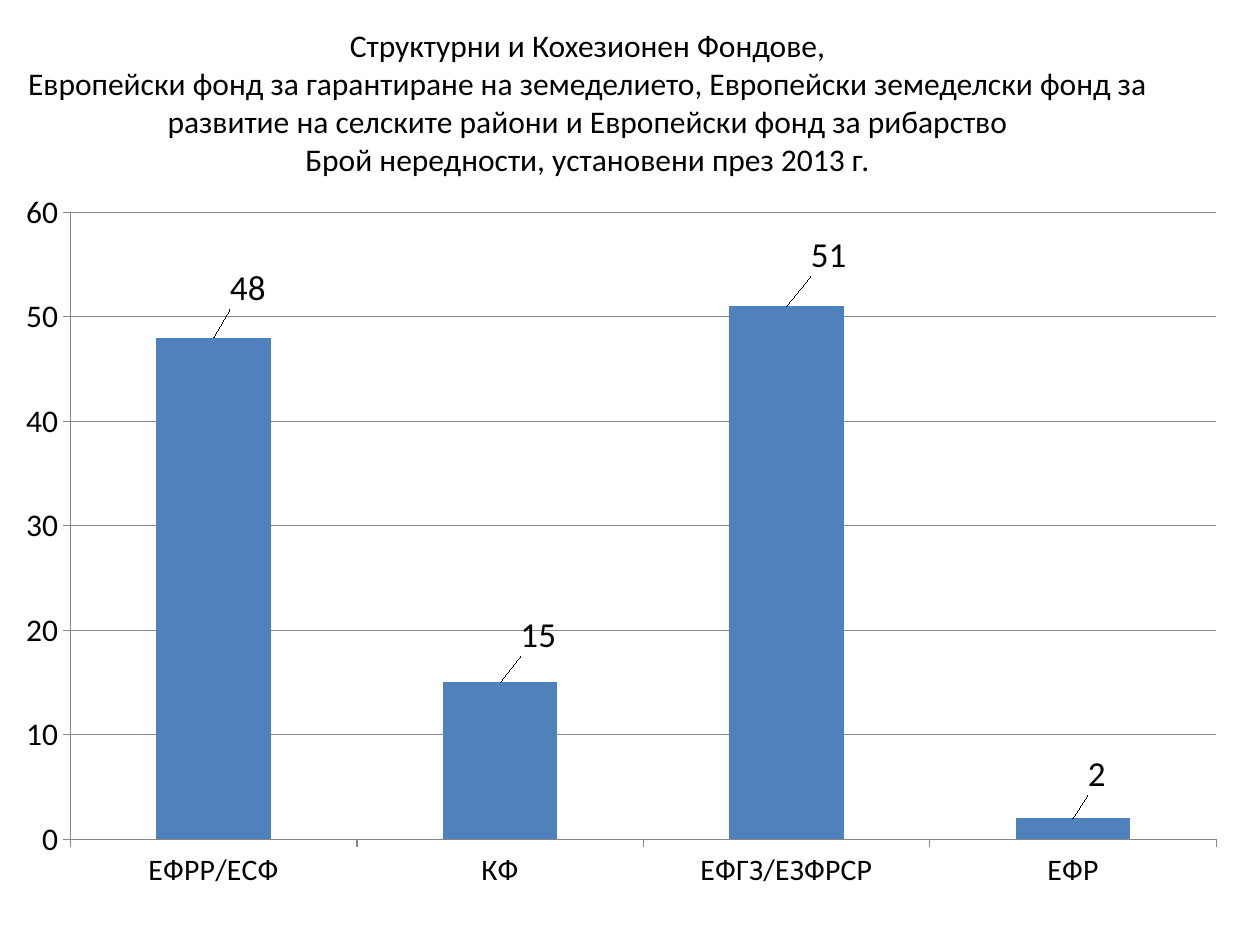
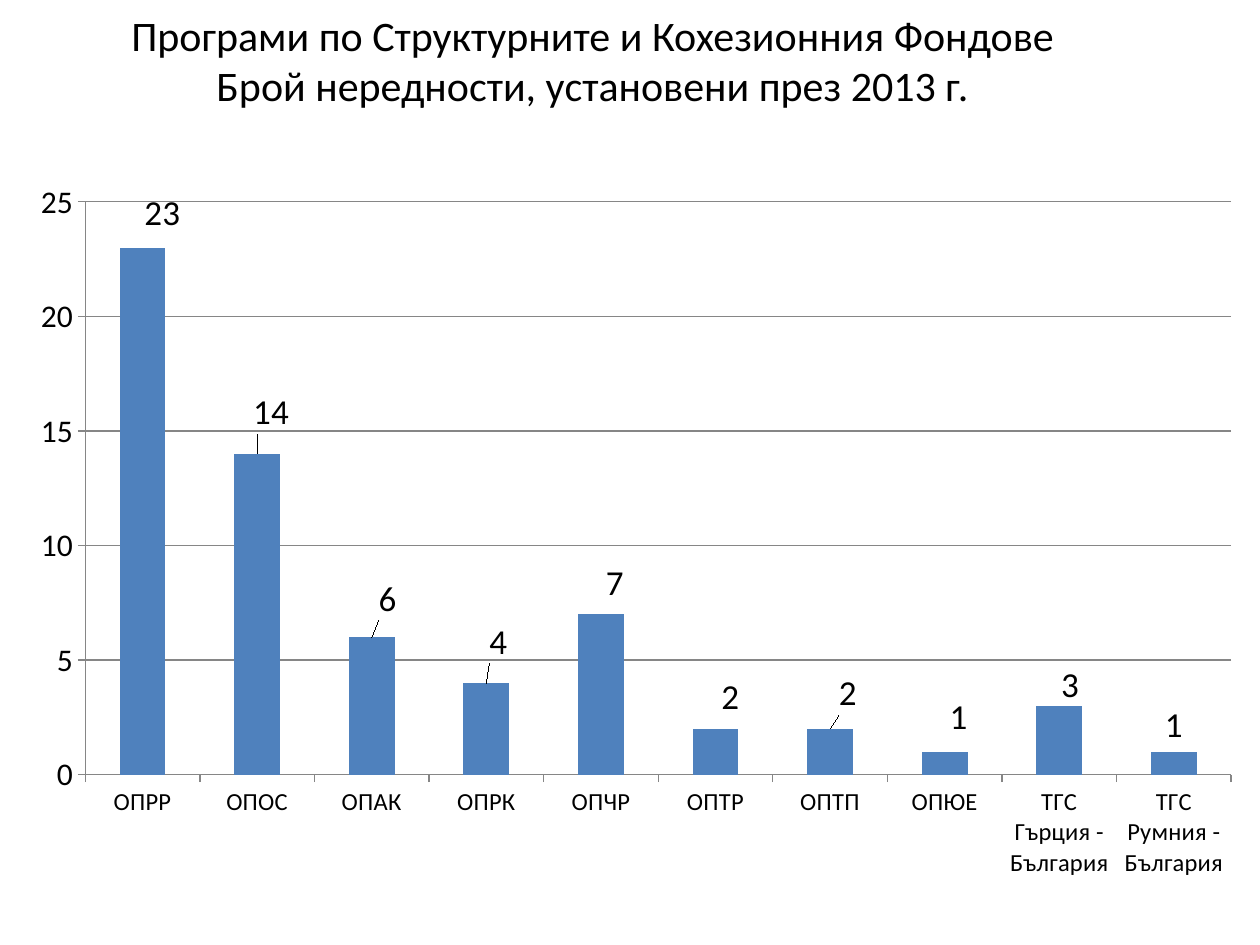
from dataclasses import dataclass

from pptx import Presentation
from pptx import util as u
from pptx.chart.chart import Chart
from pptx.chart.data import CategoryChartData
from pptx.dml.color import RGBColor
from pptx.enum import chart as charts
from pptx.enum import text
from pptx.oxml import parse_xml
from pptx.oxml.ns import nsdecls
from pptx.slide import Slide


@dataclass(frozen=True)
class Theme:
    font: str = "Calibri"
    ink: RGBColor = RGBColor(0x00, 0x00, 0x00)
    bar: RGBColor = RGBColor(0x4F, 0x81, 0xBD)
    rule: RGBColor = RGBColor(0x86, 0x86, 0x86)
    rule_width: float = 0.75
    axis_size: int = 18
    label_size: int = 20


@dataclass(frozen=True)
class Frame:
    """Left, top, width and height in centimetres."""
    left: float
    top: float
    width: float
    height: float

    def lengths(self) -> list[u.Cm]:
        return [u.Cm(side) for side in (self.left, self.top, self.width, self.height)]


@dataclass(frozen=True)
class Bar:
    """A category, its value, and how far (cm) its label is moved right and down."""
    category: str
    value: int
    shift: tuple[float, float] | None = None


@dataclass(frozen=True)
class ChartPage:
    title: tuple[str, ...]
    title_size: int
    title_frame: Frame
    chart_frame: Frame
    plot_frame: Frame
    category_size: int
    top_value: int
    step: int
    bars: tuple[Bar, ...]


THEME = Theme()
CHART_SIZE = (24.97, 14.6)

PAGES = (
    ChartPage(
        title=(
            "Структурни и Кохезионен Фондове,",
            "Европейски фонд за гарантиране на земеделието, Европейски земеделски фонд за "
            "развитие на селските райони и Европейски фонд за рибарство",
            "Брой нередности, установени през 2013 г.",
        ),
        title_size=18,
        title_frame=Frame(0.2, 0.43, 23.29, 3.25),
        chart_frame=Frame(0.03, 3.61, *CHART_SIZE),
        plot_frame=Frame(1.39, 0.67, 23.1, 12.64),
        category_size=17,
        top_value=60,
        step=10,
        bars=(
            Bar("ЕФРР/ЕСФ", 48, (0.69, -0.46)),
            Bar("КФ", 15, (0.77, -0.42)),
            Bar("ЕФГЗ/ЕЗФРСР", 51, (0.85, -0.5)),
            Bar("ЕФР", 2, (0.48, -0.36)),
        ),
    ),
    ChartPage(
        title=(
            "Програми по Структурните и Кохезионния Фондове",
            "Брой нередности, установени през 2013 г.",
        ),
        title_size=24,
        title_frame=Frame(0.2, 0, 23.5, 2.41),
        chart_frame=Frame(0.33, 3.38, *CHART_SIZE),
        plot_frame=Frame(1.39, 0.69, 23.1, 11.55),
        category_size=14,
        top_value=25,
        step=5,
        bars=(
            Bar("ОПРР", 23, (0.4, -0.16)),
            Bar("ОПОС", 14, (0.28, -0.3)),
            Bar("ОПАК", 6, (0.32, -0.24)),
            Bar("ОПРК", 4, (0.24, -0.3)),
            Bar("ОПЧР", 7, (0.28, -0.1)),
            Bar("ОПТР", 2, (0.3, -0.1)),
            Bar("ОПТП", 2, (0.36, -0.18)),
            Bar("ОПЮЕ", 1, (0.28, -0.16)),
            Bar("ТГС Гърция - България", 3, (0.22, 0.12)),
            Bar("ТГС Румния - България", 1),
        ),
    ),
)


def assign(target: object, values: dict[str, object]) -> None:
    for name, value in values.items():
        setattr(target, name, value)


def style_font(font: object, size: int) -> None:
    assign(font, {"name": THEME.font, "size": u.Pt(size), "bold": False})
    font.color.rgb = THEME.ink


def manual_layout(tags: dict[str, object]):
    """Make a chart layout element; its tags must be in schema order."""
    body = "".join(f'<c:{tag} val="{value}"/>' for tag, value in tags.items())
    return parse_xml(
        f'<c:layout {nsdecls("c")}><c:manualLayout>{body}</c:manualLayout></c:layout>'
    )


def place_plot(chart: Chart, frame: Frame) -> None:
    width, height = CHART_SIZE
    area = chart.element.xpath(".//c:plotArea")[0]
    for old in area.xpath("./c:layout"):
        area.remove(old)
    area.insert(0, manual_layout({
        "layoutTarget": "inner", "xMode": "edge", "yMode": "edge",
        "x": frame.left / width, "y": frame.top / height,
        "w": frame.width / width, "h": frame.height / height,
    }))


def style_axes(chart: Chart, page: ChartPage) -> None:
    values, categories = chart.value_axis, chart.category_axis
    assign(values, {
        "minimum_scale": 0, "maximum_scale": page.top_value,
        "major_unit": page.step, "has_major_gridlines": True,
    })
    for axis, size in ((values, THEME.axis_size), (categories, page.category_size)):
        axis.major_tick_mark = charts.XL_TICK_MARK.OUTSIDE
        style_font(axis.tick_labels.font, size)
    for lined in (values, categories, values.major_gridlines):
        lined.format.line.color.rgb = THEME.rule
        lined.format.line.width = u.Pt(THEME.rule_width)


def label_bars(chart: Chart, bars: tuple[Bar, ...]) -> None:
    series = chart.plots[0].series[0]
    above = charts.XL_LABEL_POSITION.OUTSIDE_END
    assign(series.data_labels, {"show_value": True, "position": above})
    style_font(series.data_labels.font, THEME.label_size)
    shifts = [bar.shift for bar in bars if bar.shift]
    for index in range(len(shifts)):
        label = series.points[index].data_label
        style_font(label.font, THEME.label_size)
        label.position = above
    for element, (right, down) in zip(chart.element.xpath(".//c:dLbl"), shifts):
        element.insert(1, manual_layout({
            "x": right / CHART_SIZE[0], "y": down / CHART_SIZE[1],
        }))


def add_bar_chart(slide: Slide, page: ChartPage) -> None:
    data = CategoryChartData()
    data.categories = [bar.category for bar in page.bars]
    data.add_series("Series 1", [bar.value for bar in page.bars])
    chart = slide.shapes.add_chart(
        charts.XL_CHART_TYPE.COLUMN_CLUSTERED, *page.chart_frame.lengths(), data
    ).chart
    assign(chart, {"has_legend": False, "has_title": False})
    style_font(chart.font, THEME.axis_size)
    plot = chart.plots[0]
    assign(plot, {"gap_width": 150, "vary_by_categories": False})
    fill = plot.series[0].format.fill
    fill.solid()
    fill.fore_color.rgb = THEME.bar
    place_plot(chart, page.plot_frame)
    style_axes(chart, page)
    label_bars(chart, page.bars)


def set_title(slide: Slide, page: ChartPage) -> None:
    title = slide.shapes.title
    assign(title, dict(zip(("left", "top", "width", "height"), page.title_frame.lengths())))
    box = title.text_frame
    box.text = "\v".join(page.title)
    assign(box, {
        "word_wrap": True,
        "auto_size": text.MSO_AUTO_SIZE.NONE,
        "vertical_anchor": text.MSO_ANCHOR.MIDDLE,
    })
    para = box.paragraphs[0]
    para.alignment = text.PP_ALIGN.CENTER
    for span in para.runs:
        style_font(span.font, page.title_size)


def main() -> None:
    deck = Presentation()
    assign(deck, {"slide_width": u.Cm(25.4), "slide_height": u.Cm(19.05)})
    title_only = deck.slide_layouts.get_by_name("Title Only")
    for page in PAGES:
        slide = deck.slides.add_slide(title_only)
        set_title(slide, page)
        add_bar_chart(slide, page)
    deck.save("out.pptx")


if __name__ == "__main__":
    main()
